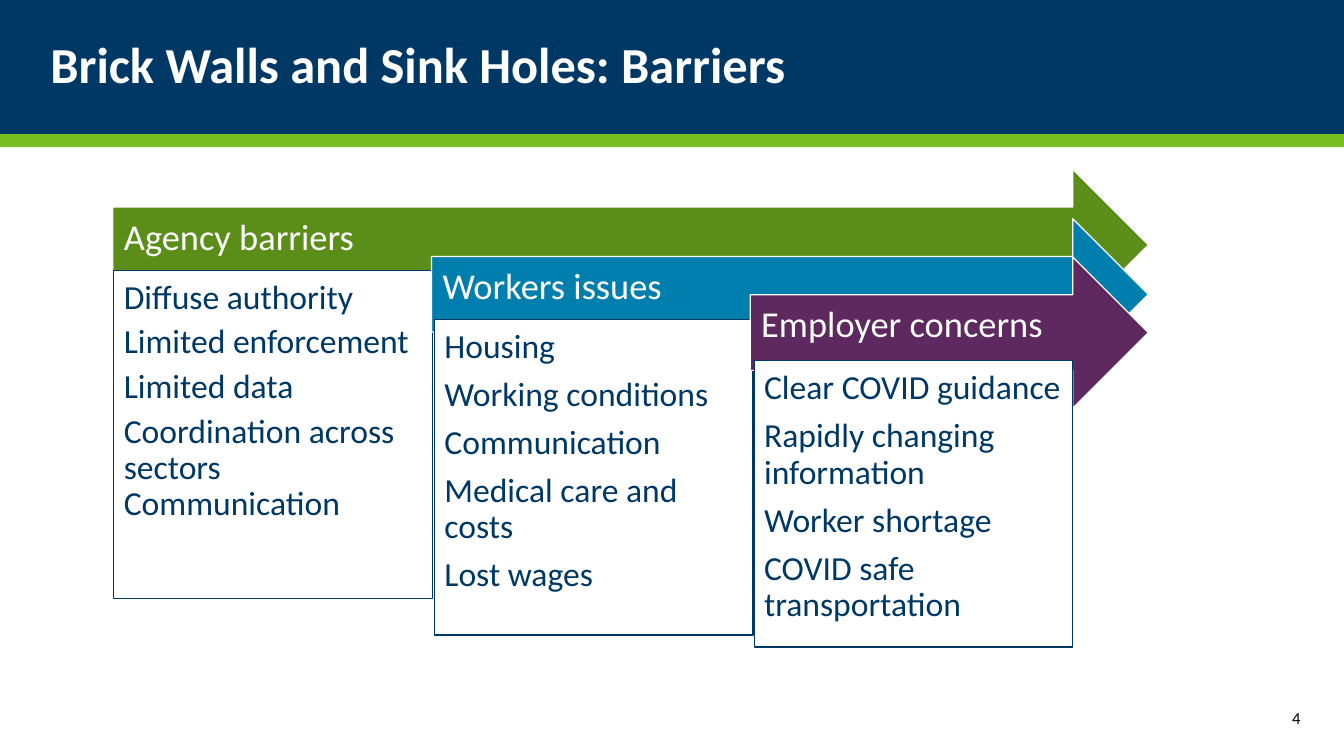
from dataclasses import dataclass

import lxml.etree
import pptx
import pptx.dml.color
import pptx.enum.shapes
import pptx.enum.text
import pptx.oxml.ns
import pptx.util

Inches = pptx.util.Inches
Pt = pptx.util.Pt
Shape = pptx.enum.shapes.MSO_SHAPE
Anchor = pptx.enum.text.MSO_ANCHOR
Align = pptx.enum.text.PP_ALIGN


@dataclass(frozen=True)
class Theme:
    font: str = "Calibri"
    navy: str = "003865"
    lime: str = "78BE21"
    green: str = "5A8E19"
    blue: str = "007FAF"
    purple: str = "5D295F"
    white: str = "FFFFFF"
    black: str = "000000"
    title_size: float = 36
    heading_size: float = 26
    item_size: float = 24
    number_size: float = 12
    outline: float = 0.85


THEME = Theme()
SLIDE_WIDTH = 13.33
ARROW_RIGHT = 11.39
ARROW_HEIGHT = 1.5
PANEL_WIDTH = 3.16

# Arrow heading, colour, arrow left and top, panel left, top and height,
# points after each item, items
BARRIERS = [
    ("Agency barriers", THEME.green, (1.12, 1.68), (1.13, 2.68, 3.26), 6,
     ["Diffuse authority", "Limited enforcement", "Limited data",
      "Coordination across sectors Communication"]),
    ("Workers issues", THEME.blue, (4.28, 2.17), (4.31, 3.17, 3.13), 8.4,
     ["Housing", "Working conditions", "Communication",
      "Medical care and costs", "Lost wages"]),
    ("Employer concerns", THEME.purple, (7.44, 2.55), (7.48, 3.58, 2.84), 8.4,
     ["Clear\u00a0COVID guidance", "Rapidly changing information",
      "Worker shortage", "COVID safe transportation"]),
]


def rgb(color):
    return pptx.dml.color.RGBColor.from_string(color)


def style_font(font, size, color, bold=False):
    font.name = THEME.font
    font.size = Pt(size)
    font.bold = bold
    font.color.rgb = rgb(color)


def set_frame(frame, insets, anchor):
    frame.word_wrap = True
    frame.auto_size = pptx.enum.text.MSO_AUTO_SIZE.NONE
    frame.vertical_anchor = anchor
    (frame.margin_left, frame.margin_top,
     frame.margin_right, frame.margin_bottom) = map(Inches, insets)


def write_lines(frame, lines, size, color, space_after=0, bold=False):
    for index, line in enumerate(lines):
        paragraph = frame.add_paragraph() if index else frame.paragraphs[0]
        paragraph.alignment = Align.LEFT
        paragraph.line_spacing = 0.9
        paragraph.space_after = Pt(space_after)
        run = paragraph.add_run()
        run.text = line
        style_font(run.font, size, color, bold)


def add_block(slide, kind, box, fill, line=None):
    shape = slide.shapes.add_shape(kind, *map(Inches, box))
    shape.shadow.inherit = False
    shape.fill.solid()
    shape.fill.fore_color.rgb = rgb(fill)
    if line:
        shape.line.color.rgb = rgb(line)
        shape.line.width = Pt(THEME.outline)
    else:
        shape.line.fill.background()
    return shape


def add_header(slide, text):
    title = slide.shapes.title
    bars = [((0, 0, SLIDE_WIDTH, 1.33), THEME.navy),
            ((0, 1.33, SLIDE_WIDTH, 0.13), THEME.lime)]
    # The bars lie behind the title
    for box, color in bars:
        bar = add_block(slide, Shape.RECTANGLE, box, color)
        title._element.addprevious(bar._element)
    title.left, title.top = Inches(0), Inches(0)
    title.width, title.height = Inches(13), Inches(1.33)
    set_frame(title.text_frame, (0.5, 0.05, 0, 0.05), Anchor.MIDDLE)
    write_lines(title.text_frame, [text], THEME.title_size, THEME.white, bold=True)


def add_arrow(slide, heading, color, left, top):
    box = (left, top, ARROW_RIGHT - left, ARROW_HEIGHT)
    arrow = add_block(slide, Shape.RIGHT_ARROW, box, color, THEME.white)
    set_frame(arrow.text_frame, (0.11, 0.11, 0.28, 0.24), Anchor.MIDDLE)
    write_lines(arrow.text_frame, [heading], THEME.heading_size, THEME.white)


def add_panel(slide, items, left, top, height, space_after):
    box = (left, top, PANEL_WIDTH, height)
    panel = add_block(slide, Shape.RECTANGLE, box, THEME.white, THEME.navy)
    set_frame(panel.text_frame, (0.1, 0.1, 0.1, 0.1), Anchor.TOP)
    write_lines(panel.text_frame, items, THEME.item_size, THEME.navy, space_after)


def add_slide_number(slide, number):
    box = slide.shapes.add_textbox(*map(Inches, (11.4, 6.92, 1.6, 0.4)))
    set_frame(box.text_frame, (0.1, 0.05, 0.1, 0.05), Anchor.MIDDLE)
    paragraph = box.text_frame.paragraphs[0]
    paragraph.alignment = Align.RIGHT
    run = paragraph.add_run()
    run.text = number
    style_font(run.font, THEME.number_size, THEME.black)


def main():
    presentation = pptx.Presentation()
    presentation.slide_width = Inches(SLIDE_WIDTH)
    presentation.slide_height = Inches(7.5)
    slide = presentation.slides.add_slide(presentation.slide_layouts[5])

    # Title band
    add_header(slide, "Brick Walls and Sink Holes: Barriers")

    # Stepped arrows, each with its list below
    for heading, color, arrow_place, panel_place, space_after, items in BARRIERS:
        add_arrow(slide, heading, color, *arrow_place)
        add_panel(slide, items, *panel_place, space_after)

    # Footer
    add_slide_number(slide, "4")
    presentation.save("out.pptx")


if __name__ == "__main__":
    main()
